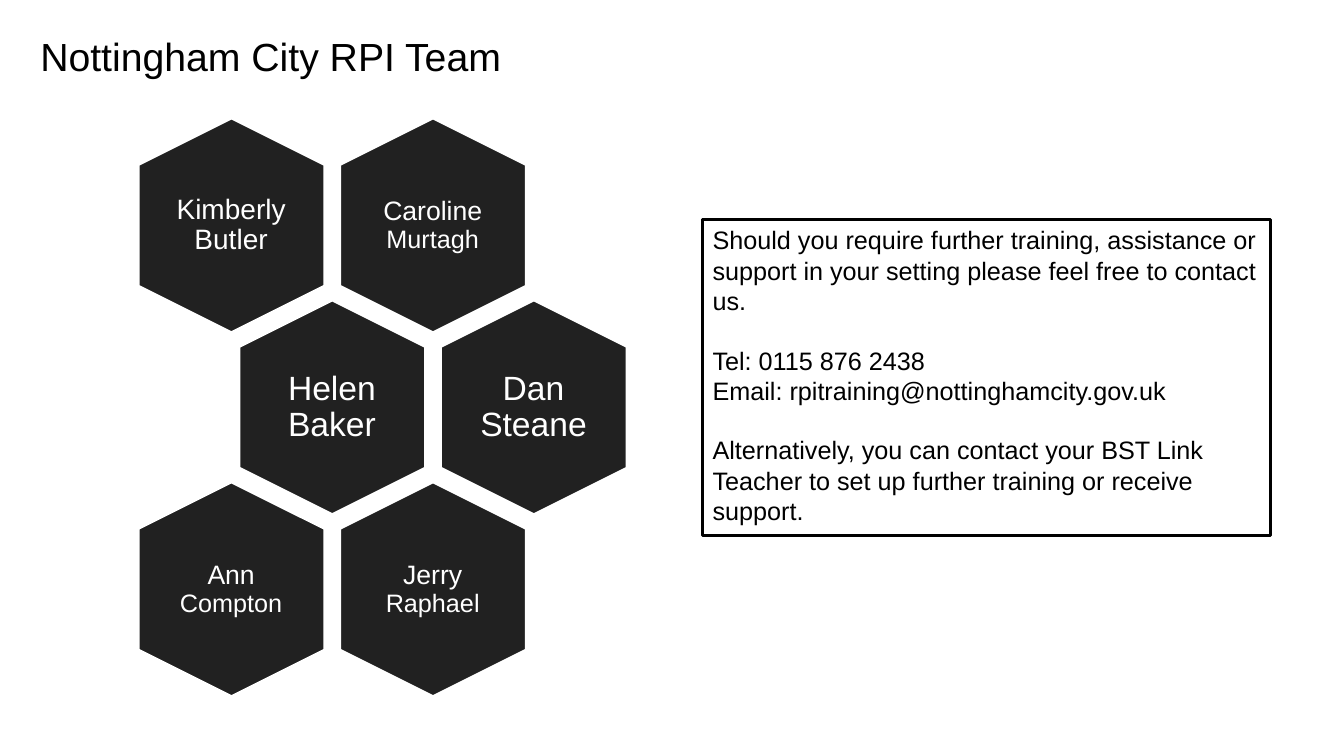
from pptx import Presentation, util as u
from pptx.dml import color
from pptx.enum import shapes, text

COLORS = {"ink": "000000", "paper": "FFFFFF", "hexagon": "212121"}
TEAM = [
    (0, 0, [("Kimberly Butler", 20)]),
    (0, 2, [("Caroline ", 19), ("Murtagh", 18)]),
    (1, 1, [("Helen Baker", 24)]),
    (1, 3, [("Dan Steane", 24)]),
    (2, 0, [("Ann ", 19), ("Compton", 18)]),
    (2, 2, [("Jerry ", 19), ("Raphael", 18)]),
]
CONTACT = [
    ("Should you require further training, assistance or support in your "
     "setting please feel free to contact us.", 0),
    ("Tel: 0115 876 2438", 21),
    ("Email: rpitraining@nottinghamcity.gov.uk", 0),
    ("Alternatively, you can contact your BST Link Teacher to set up further "
     "training or receive support.", 21),
]


class TeamSlide:
    font = "Arial"
    first_left, first_top = 9.23, 17.47
    half_column, row_height = 7.5, 24.07

    def __init__(self, deck):
        self.deck = deck
        self.slide = deck.slides.add_slide(deck.slide_layouts[5])

    def area(self, left, top, width, height):
        across, down = self.deck.slide_width, self.deck.slide_height
        return [int(share * side / 100) for share, side in
                zip((left, top, width, height), (across, down, across, down))]

    def rgb(self, name):
        return color.RGBColor.from_string(COLORS[name])

    def style(self, run, size, ink):
        run.font.name = self.font
        run.font.size = u.Pt(size)
        run.font.color.rgb = self.rgb(ink)

    def frame(self, shape, anchor, inset):
        frame = shape.text_frame
        frame.word_wrap = True
        frame.auto_size = text.MSO_AUTO_SIZE.NONE
        frame.vertical_anchor = anchor
        frame.margin_left = frame.margin_right = u.Inches(inset)
        frame.margin_top = frame.margin_bottom = u.Inches(inset)
        return frame

    def paint(self, shape, fill, line):
        shape.shadow.inherit = False
        shape.fill.solid()
        shape.fill.fore_color.rgb = self.rgb(fill)
        shape.line.color.rgb = self.rgb(line)
        shape.line.width = u.Pt(2)

    def title(self, wording):
        title = self.slide.shapes.title
        title.left, title.top, title.width, title.height = self.area(2.25, 2.93, 84, 20)
        frame = self.frame(title, text.MSO_ANCHOR.TOP, 0.1)
        frame.text = wording
        frame.paragraphs[0].alignment = text.PP_ALIGN.LEFT
        self.style(frame.paragraphs[0].runs[0], 28, "ink")

    def member(self, group, row, column, names):
        left = self.first_left + column * self.half_column
        top = self.first_top + row * self.row_height
        hexagon = group.shapes.add_shape(
            shapes.MSO_SHAPE.HEXAGON, *self.area(left, top, 15.98, 24.67))
        hexagon.rotation = 90
        hexagon.adjustments[0] = 0.25
        hexagon.adjustments[1] = 1.155
        self.paint(hexagon, "hexagon", "paper")
        label = group.shapes.add_textbox(
            *self.area(left + 3.2, top + 2.63, 9.53, 19.47))
        paragraph = self.frame(label, text.MSO_ANCHOR.MIDDLE, 0).paragraphs[0]
        paragraph.alignment = text.PP_ALIGN.CENTER
        paragraph.line_spacing = 0.9
        for name, size in names:
            run = paragraph.add_run()
            run.text = name
            self.style(run, size, "paper")

    def team(self, members):
        group = self.slide.shapes.add_group_shape()
        for row, column, names in members:
            self.member(group, row, column, names)

    def contact(self, lines):
        box = self.slide.shapes.add_shape(
            shapes.MSO_SHAPE.RECTANGLE, *self.area(52.28, 29.07, 42.23, 41.73))
        self.paint(box, "paper", "ink")
        frame = box.text_frame
        frame.word_wrap = True
        frame.auto_size = text.MSO_AUTO_SIZE.SHAPE_TO_FIT_TEXT
        frame.vertical_anchor = text.MSO_ANCHOR.TOP
        frame.text = "\n".join(line for line, gap in lines)
        for paragraph, (line, gap) in zip(frame.paragraphs, lines):
            paragraph.alignment = text.PP_ALIGN.LEFT
            if gap:
                paragraph.space_before = u.Pt(gap)
            self.style(paragraph.runs[0], 18, "ink")


def main():
    deck = Presentation()
    deck.slide_width, deck.slide_height = u.Inches(13.33), u.Inches(7.5)
    slide = TeamSlide(deck)
    slide.title("Nottingham City RPI Team")
    slide.team(TEAM)
    slide.contact(CONTACT)
    deck.save("out.pptx")


if __name__ == "__main__":
    main()
